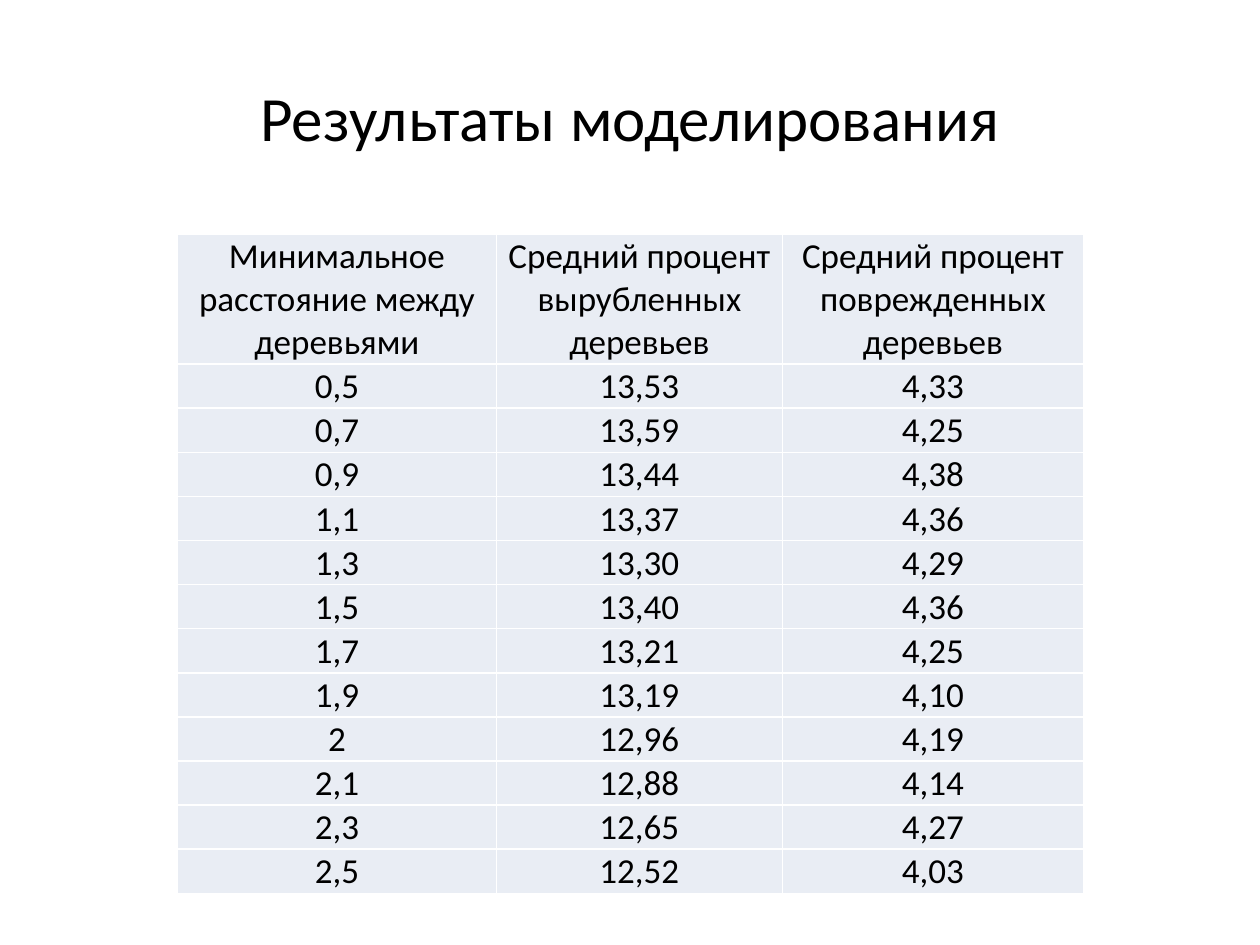
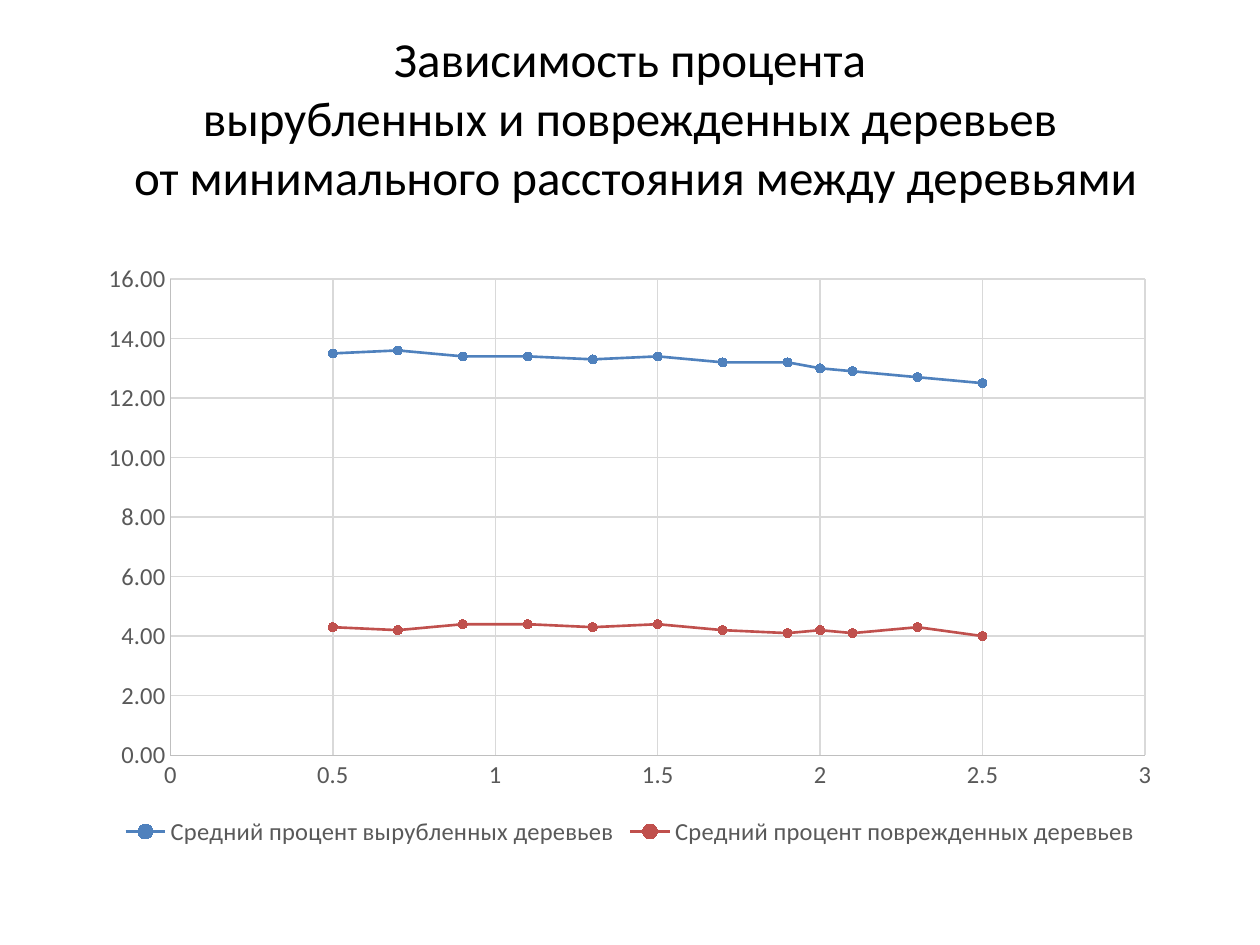
from lxml import etree
from pptx import Presentation
from pptx.chart.data import XyChartData
from pptx.dml.color import RGBColor
from pptx.enum.chart import XL_CHART_TYPE as CHART, XL_LEGEND_POSITION as LEGEND
from pptx.enum.chart import XL_MARKER_STYLE as MARKER, XL_TICK_MARK as TICK
from pptx.enum.text import MSO_ANCHOR as ANCHOR, PP_ALIGN as ALIGN
from pptx.oxml.ns import qn
from pptx.util import Inches, Pt

COLORS = {
    "text": "000000", "cell": "E9EDF4", "border": "FFFFFF", "label": "595959",
    "axis": "BFBFBF", "grid": "D9D9D9", "felled": "4F81BD", "damaged": "C0504D",
}
FONT = "Calibri"
HEADERS = [
    "Минимальное расстояние между деревьями",
    "Средний процент вырубленных деревьев",
    "Средний процент поврежденных деревьев",
]
RESULTS = [
    ("0,5", "13,53", "4,33"), ("0,7", "13,59", "4,25"), ("0,9", "13,44", "4,38"),
    ("1,1", "13,37", "4,36"), ("1,3", "13,30", "4,29"), ("1,5", "13,40", "4,36"),
    ("1,7", "13,21", "4,25"), ("1,9", "13,19", "4,10"), ("2", "12,96", "4,19"),
    ("2,1", "12,88", "4,14"), ("2,3", "12,65", "4,27"), ("2,5", "12,52", "4,03"),
]


def rgb(name):
    return RGBColor.from_string(COLORS[name])


def apply(target, values):
    for name, value in values.items():
        setattr(target, name, value)


def number(text):
    return round(float(text.replace(",", ".")), 1)


class Deck:
    def __init__(self):
        self.prs = Presentation()
        apply(self.prs, {"slide_width": Inches(10), "slide_height": Inches(7.5)})
        self.s = None

    def font(self, font, size, color="text"):
        apply(font, {"name": FONT, "size": Pt(size), "bold": False})
        font.color.rgb = rgb(color)

    def line(self, line, color, width):
        line.color.rgb = rgb(color)
        line.width = Pt(width)

    def text(self, tf, text, size):
        p = tf.paragraphs[0]
        p.text = text
        p.alignment = ALIGN.CENTER
        for r in p.runs:
            self.font(r.font, size)

    def slide(self, title, size):
        self.s = self.prs.slides.add_slide(self.prs.slide_layouts[6])
        box = self.s.shapes.add_textbox(Inches(0.5), Inches(0.3), Inches(9), Inches(1.25))
        tf = box.text_frame
        apply(tf, {"word_wrap": True, "vertical_anchor": ANCHOR.MIDDLE})
        self.text(tf, title, size)

    def borders(self, cell):
        tc_pr = cell._tc.get_or_add_tcPr()
        for side in ("a:lnL", "a:lnR", "a:lnT", "a:lnB"):
            ln = etree.SubElement(tc_pr, qn(side), w=str(Pt(1)))
            fill = etree.SubElement(ln, qn("a:solidFill"))
            etree.SubElement(fill, qn("a:srgbClr"), val=COLORS["border"])

    def table(self, rows, left, top, widths, heights):
        frame = self.s.shapes.add_table(
            len(rows), len(widths), Inches(left), Inches(top),
            Inches(sum(widths)), Inches(sum(heights)))
        table = frame.table
        apply(table, {"first_row": False, "horz_banding": False})
        for column, width in zip(table.columns, widths):
            column.width = Inches(width)
        for i, (row, height) in enumerate(zip(rows, heights)):
            table.rows[i].height = Inches(height)
            for j, value in enumerate(row):
                cell = table.cell(i, j)
                apply(cell, {
                    "margin_left": Inches(0.01), "margin_right": Inches(0.01),
                    "margin_top": Inches(0.01), "margin_bottom": 0,
                    "vertical_anchor": ANCHOR.BOTTOM if i else ANCHOR.TOP,
                })
                self.borders(cell)
                cell.fill.solid()
                cell.fill.fore_color.rgb = rgb("cell")
                self.text(cell.text_frame, value, 20)

    def axis(self, axis, maximum, step, number_format):
        apply(axis, {
            "minimum_scale": 0, "maximum_scale": maximum, "major_unit": step,
            "has_major_gridlines": True, "has_minor_gridlines": False,
            "major_tick_mark": TICK.NONE, "minor_tick_mark": TICK.NONE,
        })
        apply(axis.tick_labels, {"number_format": number_format,
                                 "number_format_is_linked": False})
        self.font(axis.tick_labels.font, 14, "label")
        self.line(axis.format.line, "axis", 0.75)
        self.line(axis.major_gridlines.format.line, "grid", 0.75)

    def scatter(self, names, rows, colors, left, top, width, height):
        data = XyChartData()
        for column, name in enumerate(names, 1):
            series = data.add_series(name)
            for row in rows:
                series.add_data_point(number(row[0]), number(row[column]))
        chart = self.s.shapes.add_chart(
            CHART.XY_SCATTER_LINES, Inches(left), Inches(top),
            Inches(width), Inches(height), data).chart
        apply(chart, {"has_title": False, "has_legend": True})
        self.font(chart.font, 10)
        apply(chart.legend, {"position": LEGEND.BOTTOM, "include_in_layout": False})
        self.font(chart.legend.font, 14, "label")
        self.axis(chart.category_axis, 3, 0.5, "General")
        self.axis(chart.value_axis, 16, 2, "0.00")
        plot = chart.plots[0]
        plot.vary_by_categories = False
        for series, color in zip(plot.series, colors):
            series.smooth = False
            self.line(series.format.line, color, 1.5)
            marker = series.marker
            apply(marker, {"style": MARKER.CIRCLE, "size": 5})
            marker.format.fill.solid()
            marker.format.fill.fore_color.rgb = rgb(color)
            self.line(marker.format.line, color, 0.75)


def main():
    deck = Deck()

    # Table of results
    deck.slide("Результаты моделирования", 36)
    deck.table([HEADERS] + RESULTS, 1.41, 1.86, [2.53, 2.27, 2.39],
               [1.03] + [0.35] * len(RESULTS))

    # Chart of the same results
    deck.slide("Зависимость процента\vвырубленных и поврежденных деревьев\v"
               " от минимального расстояния между деревьями", 28)
    deck.scatter(HEADERS[1:], RESULTS, ["felled", "damaged"], 0.69, 2, 8.62, 4.76)

    deck.prs.save("out.pptx")


if __name__ == "__main__":
    main()
